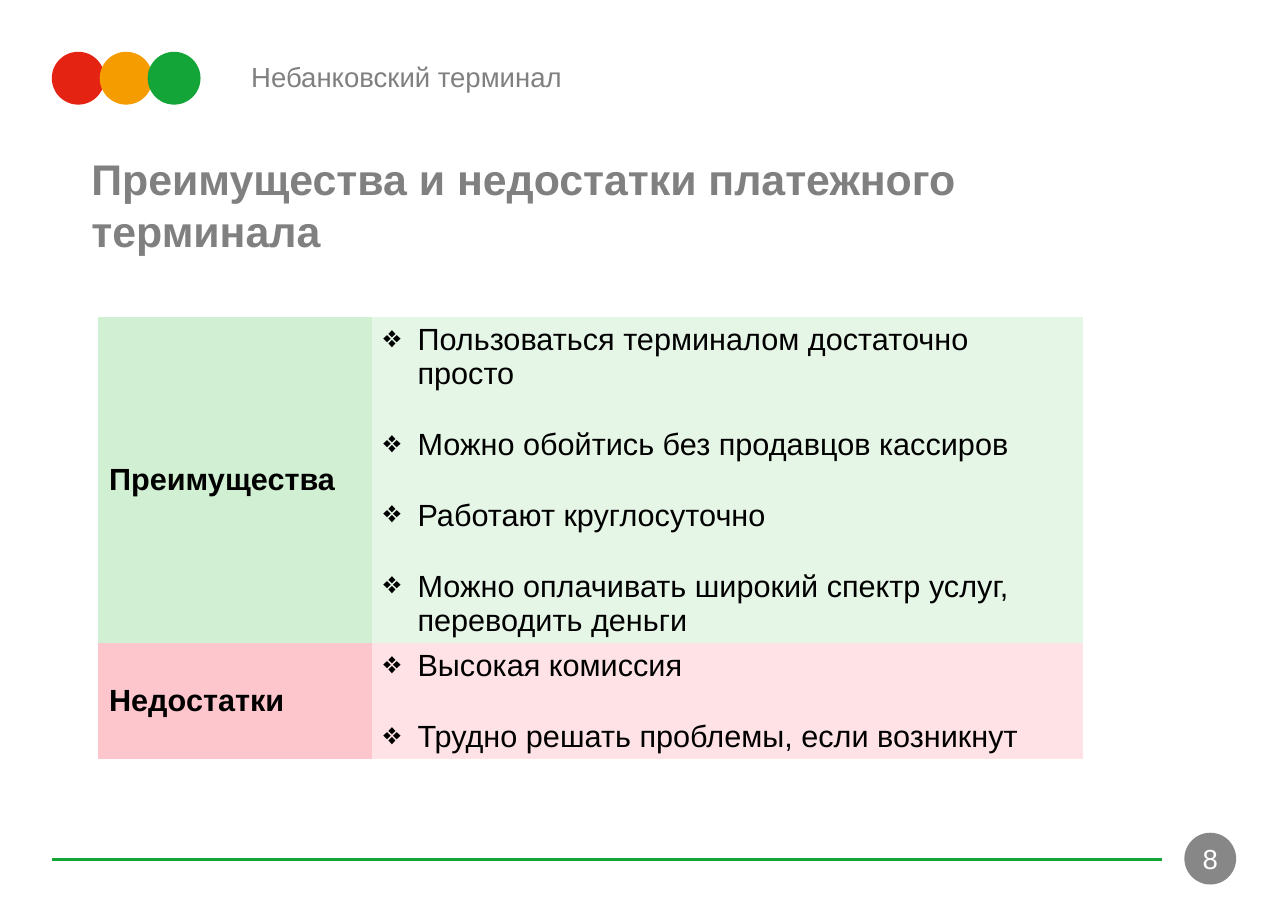
from dataclasses import dataclass

from lxml import etree
from pptx import Presentation
from pptx.dml.color import RGBColor
from pptx.enum.shapes import MSO_CONNECTOR, MSO_SHAPE
from pptx.enum.text import MSO_ANCHOR, MSO_AUTO_SIZE, PP_ALIGN
from pptx.oxml.ns import qn
from pptx.util import Inches, Pt

OVAL = MSO_SHAPE.OVAL
STRAIGHT = MSO_CONNECTOR.STRAIGHT
LEFT, CENTER = PP_ALIGN.LEFT, PP_ALIGN.CENTER
TOP, MIDDLE = MSO_ANCHOR.TOP, MSO_ANCHOR.MIDDLE
NO_AUTOFIT = MSO_AUTO_SIZE.NONE
TITLE_AND_CONTENT = 1
NO_STYLE_NO_GRID = "{2D5ABB26-0587-4C30-8999-92F81FD0307C}"


@dataclass(frozen=True)
class Theme:
    font: str = "Arial"
    red: str = "E42313"
    amber: str = "F59C00"
    green: str = "13A538"
    badge: str = "878787"
    heading: str = "808080"
    text: str = "000000"
    white: str = "FFFFFF"
    pros_label: str = "D1EFD2"
    pros_list: str = "E6F6E6"
    cons_label: str = "FDC6CD"
    cons_list: str = "FEE2E5"
    small_size: int = 18
    table_size: int = 20
    title_size: int = 28


ROWS = [
    ("Преимущества", 2.96, Theme.pros_label, Theme.pros_list, [
        "Пользоваться терминалом достаточно просто",
        "Можно обойтись без продавцов кассиров",
        "Работают круглосуточно",
        "Можно оплачивать широкий спектр услуг, переводить деньги",
    ]),
    ("Недостатки", 1.05, Theme.cons_label, Theme.cons_list, [
        "Высокая комиссия",
        "Трудно решать проблемы, если возникнут",
    ]),
]


class SlideBuilder:
    def __init__(self, slide, theme):
        self.slide = slide
        self.theme = theme

    def format_paragraph(self, paragraph, size, color, bold=False, align=LEFT):
        paragraph.alignment = align
        font = paragraph.font
        font.name = self.theme.font
        font.size = Pt(size)
        font.bold = bold
        font.color.rgb = RGBColor.from_string(color)

    def set_bullet(self, paragraph, character=None, indent=0):
        """Give the paragraph a hanging bullet, or none without a character."""
        properties = paragraph._p.get_or_add_pPr()
        properties.set("marL", str(Inches(indent)))
        properties.set("indent", str(-Inches(indent)))
        if character:
            etree.SubElement(properties, qn("a:buChar"), char=character)
        else:
            etree.SubElement(properties, qn("a:buNone"))

    def placeholder(self, index, text, left, top, width, height, size, bold=False):
        shape = self.slide.placeholders[index]
        shape.left, shape.top = Inches(left), Inches(top)
        shape.width, shape.height = Inches(width), Inches(height)
        frame = shape.text_frame
        frame.text = text
        frame.word_wrap = True
        frame.auto_size = NO_AUTOFIT
        frame.vertical_anchor = TOP
        paragraph = frame.paragraphs[0]
        self.set_bullet(paragraph)
        paragraph.space_before = Pt(0)
        self.format_paragraph(paragraph, size, self.theme.heading, bold)

    def circle(self, left, top, diameter, color):
        shape = self.slide.shapes.add_shape(
            OVAL, Inches(left), Inches(top), Inches(diameter), Inches(diameter))
        shape.shadow.inherit = False
        shape.fill.solid()
        shape.fill.fore_color.rgb = RGBColor.from_string(color)
        shape.line.fill.background()
        return shape

    def page_badge(self, number, left, top, diameter):
        frame = self.circle(left, top, diameter, self.theme.badge).text_frame
        frame.margin_left = frame.margin_right = 0
        frame.vertical_anchor = MIDDLE
        frame.text = number
        self.format_paragraph(frame.paragraphs[0], self.theme.small_size,
                              self.theme.white, align=CENTER)

    def horizontal_line(self, left, right, y, color, width):
        line = self.slide.shapes.add_connector(
            STRAIGHT, Inches(left), Inches(y), Inches(right), Inches(y))
        line.line.color.rgb = RGBColor.from_string(color)
        line.line.width = Pt(width)
        etree.SubElement(line._element.spPr, qn("a:effectLst"))

    def fill_cell(self, cell, texts, color, bulleted):
        cell.fill.solid()
        cell.fill.fore_color.rgb = RGBColor.from_string(color)
        cell.vertical_anchor = TOP if bulleted else MIDDLE
        cell.text = "\n".join(texts)
        for position, paragraph in enumerate(cell.text_frame.paragraphs):
            if bulleted:
                self.set_bullet(paragraph, "❖", 0.31)
            if position:
                paragraph.space_before = Pt(24)
            self.format_paragraph(paragraph, self.theme.table_size,
                                  self.theme.text, bold=not bulleted)

    def comparison_table(self, rows, left, top, widths):
        height = sum(row[1] for row in rows)
        table = self.slide.shapes.add_table(
            len(rows), len(widths), Inches(left), Inches(top),
            Inches(sum(widths)), Inches(height)).table
        table.first_row = table.horz_banding = False
        table._tbl.tblPr.find(qn("a:tableStyleId")).text = NO_STYLE_NO_GRID
        for column, width in zip(table.columns, widths):
            column.width = Inches(width)
        for index, (label, row_height, label_fill, list_fill, points) in enumerate(rows):
            table.rows[index].height = Inches(row_height)
            self.fill_cell(table.cell(index, 0), [label], label_fill, False)
            self.fill_cell(table.cell(index, 1), points, list_fill, True)


def main():
    presentation = Presentation()
    presentation.slide_width = Inches(11.69)
    presentation.slide_height = Inches(8.27)
    layout = presentation.slide_layouts[TITLE_AND_CONTENT]
    theme = Theme()
    builder = SlideBuilder(presentation.slides.add_slide(layout), theme)

    for index, color in enumerate((theme.red, theme.amber, theme.green)):
        builder.circle(0.47 + index * 0.435, 0.47, 0.48, color)
    builder.placeholder(1, "Небанковский терминал",
                        2.18, 0.49, 7.5, 0.58, theme.small_size)
    builder.placeholder(0, "Преимущества и недостатки платежного терминала",
                        0.73, 1.34, 10, 1.1, theme.title_size, bold=True)
    builder.comparison_table(ROWS, 0.89, 2.88, (2.49, 6.45))
    builder.horizontal_line(0.47, 10.55, 7.8, theme.green, 2)
    builder.page_badge("8", 10.75, 7.56, 0.47)

    presentation.save("out.pptx")


if __name__ == "__main__":
    main()
